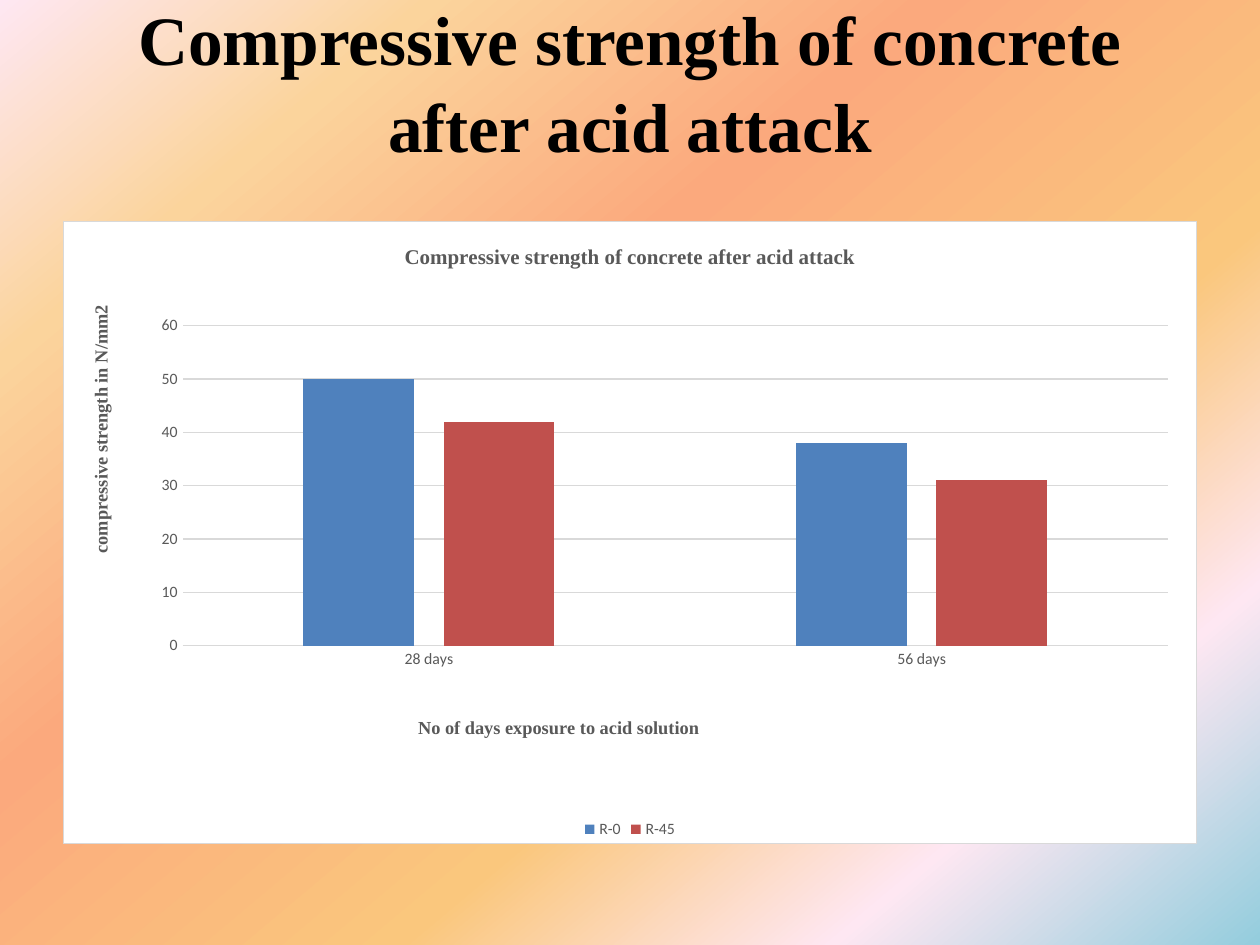
import pptx
import pptx.chart.data
import pptx.dml.color
import pptx.enum.chart
import pptx.enum.text
import pptx.oxml
import pptx.oxml.ns
import pptx.util

COLORS = {"title": "000000", "text": "595959", "line": "D9D9D9", "panel": "FFFFFF"}
FONTS = {"heading": "Times New Roman", "body": "Calibri"}
BACKGROUND = [(0, "93CDDD"), (18, "FEE7F2"), (36, "FAC77D"),
              (61, "FBA97D"), (82, "FBD49C"), (100, "FEE7F2")]
BACKGROUND_ANGLE = 230
TITLE = "Compressive strength of concrete after acid attack"
DAYS = ["28 days", "56 days"]
SERIES = [("R-0", (50, 38), "4F81BD"), ("R-45", (42, 31), "C0504D")]
DAYS_TITLE = "No of days exposure to acid solution"
STRENGTH_TITLE = "compressive strength in N/mm2"
PLOT = {"x": 0.105, "y": 0.168, "w": 0.87, "h": 0.514}
DAYS_TITLE_AT = {"x": 0.31, "y": 0.79}
STRENGTH_TITLE_AT = {"x": 0.02, "y": 0.13}

Inches, Pt = pptx.util.Inches, pptx.util.Pt
WIDTH, HEIGHT, MARGIN = 10, 7.5, 0.5
qn = pptx.oxml.ns.qn


def rgb(name):
    return pptx.dml.color.RGBColor.from_string(COLORS.get(name, name))


def style(font, size, family, color="text", bold=False):
    font.size, font.name, font.bold = Pt(size), FONTS[family], bold
    font.color.rgb = rgb(color)


def outline(line):
    line.color.rgb = rgb("line")
    line.width = Pt(0.75)


def paint_background(s):
    stops = "".join(f'<a:gs pos="{pos * 1000}"><a:srgbClr val="{c}"/></a:gs>'
                    for pos, c in BACKGROUND)
    bg = pptx.oxml.parse_xml(
        f'<p:bg {pptx.oxml.ns.nsdecls("p", "a")}><p:bgPr>'
        f'<a:gradFill rotWithShape="1"><a:gsLst>{stops}</a:gsLst>'
        f'<a:lin ang="{BACKGROUND_ANGLE * 60000}" scaled="0"/></a:gradFill>'
        '<a:effectLst/></p:bgPr></p:bg>')
    s.element.cSld.insert(0, bg)


def place(parent, index, at, inner=False):
    for old in parent.findall(qn("c:layout")):
        parent.remove(old)
    target = '<c:layoutTarget val="inner"/>' if inner else ""
    modes = "".join(f'<c:{k}Mode val="edge"/>' for k in "xy")
    values = "".join(f'<c:{k} val="{v}"/>' for k, v in at.items())
    parent.insert(index, pptx.oxml.parse_xml(
        f'<c:layout {pptx.oxml.ns.nsdecls("c")}><c:manualLayout>'
        f'{target}{modes}{values}</c:manualLayout></c:layout>'))


def panel_xml():
    return pptx.oxml.parse_xml(
        f'<c:spPr {pptx.oxml.ns.nsdecls("c", "a")}>'
        f'<a:solidFill><a:srgbClr val="{COLORS["panel"]}"/></a:solidFill>'
        f'<a:ln w="{Pt(0.75)}"><a:solidFill><a:srgbClr val="{COLORS["line"]}"/>'
        '</a:solidFill></a:ln></c:spPr>')


def write_title(owner, text, size):
    tf = owner.text_frame
    tf.text = text
    style(tf.paragraphs[0].font, size, "heading", bold=True)


def add_heading(s):
    sp = s.shapes.add_textbox(Inches(MARGIN), Inches(0.3),
                              Inches(WIDTH - 2 * MARGIN), Inches(1.25))
    tf = sp.text_frame
    tf.word_wrap = True
    tf.vertical_anchor = pptx.enum.text.MSO_ANCHOR.MIDDLE
    tf.margin_top, tf.margin_bottom = 0, Inches(0.59)
    p = tf.paragraphs[0]
    p.text = TITLE
    p.alignment = pptx.enum.text.PP_ALIGN.CENTER
    p.line_spacing = 1.05
    style(p.font, 39.6, "heading", "title", True)


def add_strength_chart(s):
    data = pptx.chart.data.CategoryChartData()
    data.categories = DAYS
    for name, values, _ in SERIES:
        data.add_series(name, values)
    chart = s.shapes.add_chart(
        pptx.enum.chart.XL_CHART_TYPE.COLUMN_CLUSTERED, Inches(MARGIN), Inches(1.75),
        Inches(WIDTH - 2 * MARGIN), Inches(HEIGHT * 0.66), data).chart
    style(chart.font, 10, "body", "title")
    write_title(chart.chart_title, TITLE, 12)
    chart.chart_title.include_in_layout = False
    chart.has_legend = True
    chart.legend.position = pptx.enum.chart.XL_LEGEND_POSITION.BOTTOM
    chart.legend.include_in_layout = False
    style(chart.legend.font, 9, "body")

    plot = chart.plots[0]
    plot.gap_width, plot.overlap, plot.vary_by_categories = 219, -27, False
    for series, (_, _, color) in zip(plot.series, SERIES):
        series.format.fill.solid()
        series.format.fill.fore_color.rgb = rgb(color)

    for axis, text, at in ((chart.category_axis, DAYS_TITLE, DAYS_TITLE_AT),
                           (chart.value_axis, STRENGTH_TITLE, STRENGTH_TITLE_AT)):
        style(axis.tick_labels.font, 9, "body")
        axis.major_tick_mark = pptx.enum.chart.XL_TICK_MARK.NONE
        axis.minor_tick_mark = pptx.enum.chart.XL_TICK_MARK.NONE
        write_title(axis.axis_title, text, 10.5)
        place(axis.axis_title._element, 1, at)
    outline(chart.category_axis.format.line)
    value_axis = chart.value_axis
    value_axis.minimum_scale, value_axis.maximum_scale, value_axis.major_unit = 0, 60, 10
    value_axis.format.line.fill.background()
    outline(value_axis.major_gridlines.format.line)
    body = value_axis.axis_title.text_frame._txBody.find(qn("a:bodyPr"))
    body.set("rot", "-5400000")
    body.set("vert", "horz")

    root = chart._chartSpace
    place(root.chart.plotArea, 0, PLOT, inner=True)
    root.chart.addnext(panel_xml())


def main():
    prs = pptx.Presentation()
    prs.slide_width, prs.slide_height = Inches(WIDTH), Inches(HEIGHT)
    s = prs.slides.add_slide(prs.slide_layouts[6])
    paint_background(s)
    add_heading(s)
    add_strength_chart(s)
    prs.save("out.pptx")


if __name__ == "__main__":
    main()
